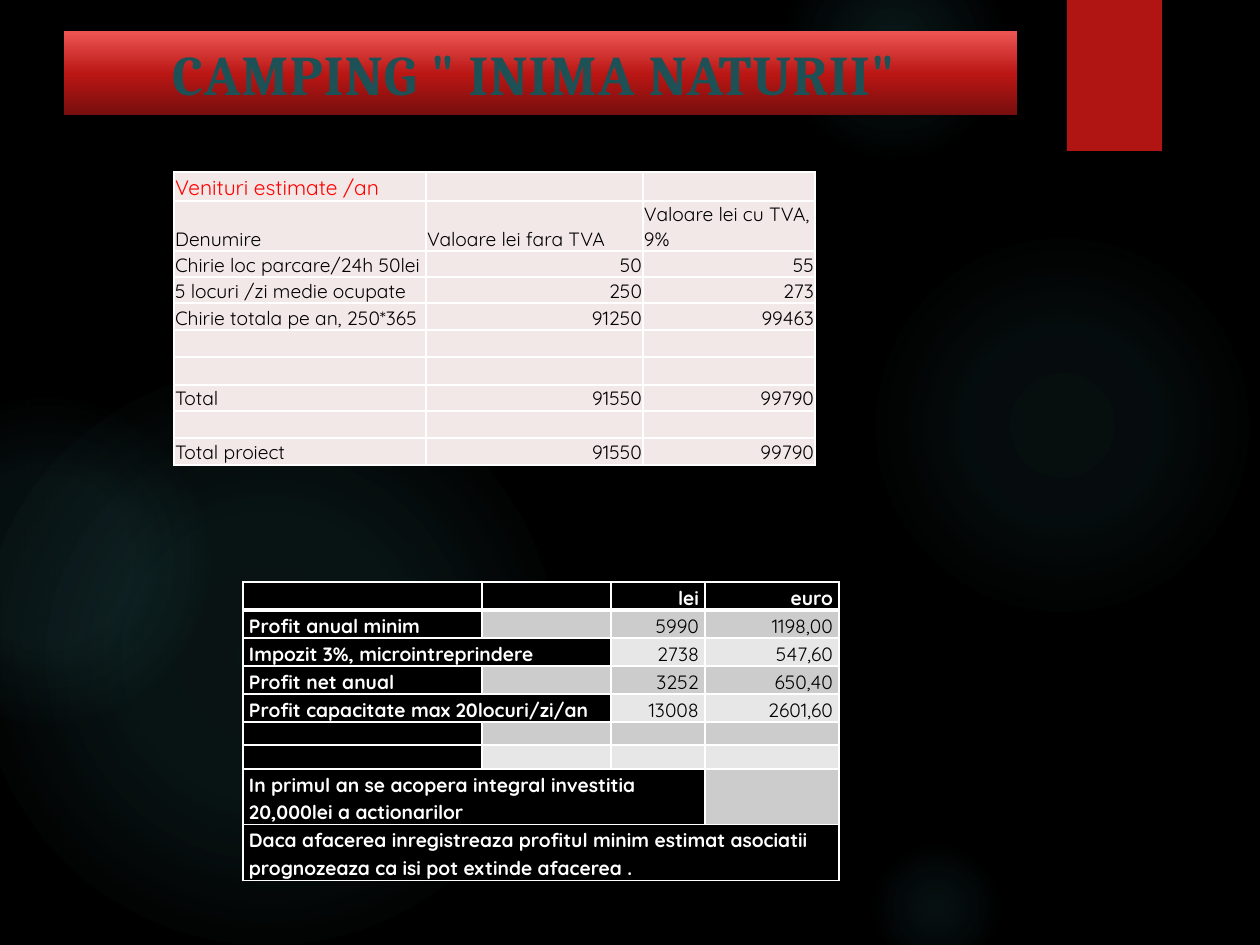
from lxml import etree
from pptx import Presentation
from pptx.dml.color import RGBColor
from pptx.enum.shapes import MSO_SHAPE
from pptx.enum.text import MSO_ANCHOR, PP_ALIGN
from pptx.oxml import parse_xml
from pptx.oxml.ns import nsdecls, qn
from pptx.util import Emu, Pt

RECT, OVAL = MSO_SHAPE.RECTANGLE, MSO_SHAPE.OVAL
LEFT, RIGHT, CENTER = PP_ALIGN.LEFT, PP_ALIGN.RIGHT, PP_ALIGN.CENTER
MIDDLE, BOTTOM = MSO_ANCHOR.MIDDLE, MSO_ANCHOR.BOTTOM
PX_PER_INCH = 126
BODY_FONT = "Quicksand"
WHITE, BLACK, GLOW = "FFFFFF", "000000", "50B9C1"


def px(length):
    return Emu(round(length * 914400 / PX_PER_INCH))


def rgb(value):
    return RGBColor.from_string(value)


def paint(fill, value):
    fill.solid()
    fill.fore_color.rgb = rgb(value)


def add_block(slide, kind, box):
    block = slide.shapes.add_shape(kind, *map(px, box))
    block.shadow.inherit = False
    block.line.fill.background()
    return block


def gradient(shape, stops, direction):
    """Stops are (position %, colour, opacity %)."""
    marks = "".join(
        f'<a:gs pos="{pos * 1000}"><a:srgbClr val="{value}">'
        f'<a:alpha val="{opacity * 1000}"/></a:srgbClr></a:gs>'
        for pos, value, opacity in stops)
    fill = parse_xml(f'<a:gradFill {nsdecls("a")} rotWithShape="1">'
                     f'<a:gsLst>{marks}</a:gsLst>{direction}</a:gradFill>')
    shape.element.spPr.find(qn("a:prstGeom")).addnext(fill)


def style_text(paragraph, size, font, value, bold=False):
    for run in paragraph.runs:
        run.font.size = Pt(size)
        run.font.name = font
        run.font.bold = bold
        run.font.color.rgb = rgb(value)


def add_glow(slide, box, inner, middle, edge):
    glow = add_block(slide, OVAL, box)
    gradient(glow, [(0, GLOW, inner), (36, GLOW, middle), (edge, GLOW, 0)],
             '<a:path path="circle"><a:fillToRect l="50000" t="50000" '
             'r="50000" b="50000"/></a:path>')


def add_bookmark(slide, box):
    bookmark = add_block(slide, RECT, box)
    paint(bookmark.fill, "B01513")
    effects = bookmark.element.spPr.find(qn("a:effectLst"))
    effects.append(parse_xml(
        f'<a:outerShdw {nsdecls("a")} blurRad="{Pt(3)}" dist="{Pt(2)}" '
        'dir="5400000" rotWithShape="0"><a:srgbClr val="000000">'
        '<a:alpha val="45000"/></a:srgbClr></a:outerShdw>'))


def add_title(slide, box):
    banner = add_block(slide, RECT, box)
    gradient(banner, [(0, "760E0D", 100), (48, "B91614", 100),
                      (100, "ED5654", 100)], '<a:lin ang="16200000" scaled="0"/>')
    frame = banner.text_frame
    frame.word_wrap = True
    frame.vertical_anchor = MIDDLE
    frame.text = 'CAMPING " INIMA NATURII" '
    title = frame.paragraphs[0]
    title.alignment = CENTER
    style_text(title, 32, "Cambria", "1E5155", True)
    title.runs[0].font._element.set("spc", "50")


def set_borders(cell, top=1, bottom=1):
    properties = cell._tc.get_or_add_tcPr()
    for place, (side, width) in enumerate(
            [("L", 1), ("R", 1), ("T", top), ("B", bottom)]):
        properties.insert(place, parse_xml(
            f'<a:ln{side} {nsdecls("a")} w="{Pt(width)}"><a:solidFill>'
            f'<a:srgbClr val="{WHITE}"/></a:solidFill></a:ln{side}>'))


def add_grid(slide, corner, widths, heights):
    frame = slide.shapes.add_table(len(heights), len(widths),
                                   *map(px, (*corner, sum(widths), sum(heights))))
    for column, width in zip(frame.table.columns, widths):
        column.width = px(width)
    for row, height in zip(frame.table.rows, heights):
        row.height = px(height)
    return frame.table


def fill_cell(cell, text, fill, margins, align, size, value,
              bold=False, spacing=1.0):
    paint(cell.fill, fill)
    cell.vertical_anchor = BOTTOM
    cell.margin_left, cell.margin_top, cell.margin_right, cell.margin_bottom = \
        map(px, margins)
    cell.text_frame.text = text
    paragraph = cell.text_frame.paragraphs[0]
    paragraph.alignment = align
    paragraph.line_spacing = spacing
    style_text(paragraph, size, BODY_FONT, value, bold)
    if not text:  # keeps empty rows from growing
        etree.SubElement(paragraph._p, qn("a:endParaRPr"), sz="800")


def add_income_table(slide, corner):
    rows = [
        ("Venituri estimate /an", "", ""),
        ("Denumire", "Valoare lei fara TVA", "Valoare lei cu TVA, 9%"),
        ("Chirie loc parcare/24h 50lei", "50", "55"),
        ("5 locuri /zi medie ocupate", "250", "273"),
        ("Chirie totala pe an, 250*365", "91250", "99463"),
        ("", "", ""),
        ("", "", ""),
        ("Total", "91550", "99790"),
        ("", "", ""),
        ("Total proiect", "91550", "99790"),
    ]
    table = add_grid(slide, corner, [252, 217, 172],
                     [29, 50, 26, 26, 27, 27, 28, 26, 27, 27])
    for r, texts in enumerate(rows):
        size, value = (12, "FF0000") if r == 0 else (11, BLACK)
        for c, text in enumerate(texts):
            cell = table.cell(r, c)
            fill_cell(cell, text, "F2E8E7", (1, 1, 1, 0),
                      RIGHT if c and r > 1 else LEFT, size, value)
            set_borders(cell)


def add_profit_table(slide, corner):
    # Each row: number of black label columns, then its texts
    rows = [
        (1, ("", "", "lei", "euro")),
        (1, ("Profit anual minim", "", "5990", "1198,00")),
        (2, ("Impozit 3%, microintreprindere", "", "2738", "547,60")),
        (1, ("Profit net anual", "", "3252", "650,40")),
        (2, ("Profit capacitate max 20locuri/zi/an", "", "13008", "2601,60")),
        (1, ("", "", "", "")),
        (1, ("", "", "", "")),
        (3, ("In primul an se acopera integral investitia 20,000lei "
             "a actionarilor", "", "", "")),
        (4, ("Daca afacerea inregistreaza profitul minim estimat asociatii "
             "prognozeaza ca isi pot extinde afacerea .", "", "", "")),
    ]
    table = add_grid(slide, corner, [239, 129, 94, 134],
                     [28, 28, 28, 28, 28, 23, 24, 56, 55])
    for r, (span, texts) in enumerate(rows):
        band = "CCCCCC" if r % 2 else "E7E7E7"
        for c, text in enumerate(texts):
            cell = table.cell(r, c)
            dark = r == 0 or c < span
            fill_cell(cell, text, BLACK if dark else band, (6, 0, 6, 0),
                      RIGHT if c else LEFT, 11, WHITE if dark else BLACK,
                      dark, 1.15)
            set_borders(cell, top=3 if r == 1 else 1, bottom=3 if r == 0 else 1)
        if span > 1:
            table.cell(r, 0).merge(table.cell(r, span - 1))


def main():
    deck = Presentation()
    deck.slide_width, deck.slide_height = px(1260), px(945)
    slide = deck.slides.add_slide(deck.slide_layouts[6])
    paint(slide.background.fill, BLACK)

    # Background glows: box, inner and middle opacity, edge position
    for glow in [
        ((868, 231, 388, 388), 7, 6, 69),
        ((784, -63, 220, 220), 14, 7, 73),
        ((868, 840, 136, 136), 9, 5, 66),
        ((-21, 368, 577, 577), 11, 10, 75),
        ((-116, 399, 325, 325), 8, 8, 72),
    ]:
        add_glow(slide, *glow)

    add_bookmark(slide, (1067, 0, 95, 151))
    add_title(slide, (64, 31, 953, 84))
    add_income_table(slide, (174, 172))
    add_profit_table(slide, (243, 582))
    deck.save("out.pptx")


if __name__ == "__main__":
    main()
